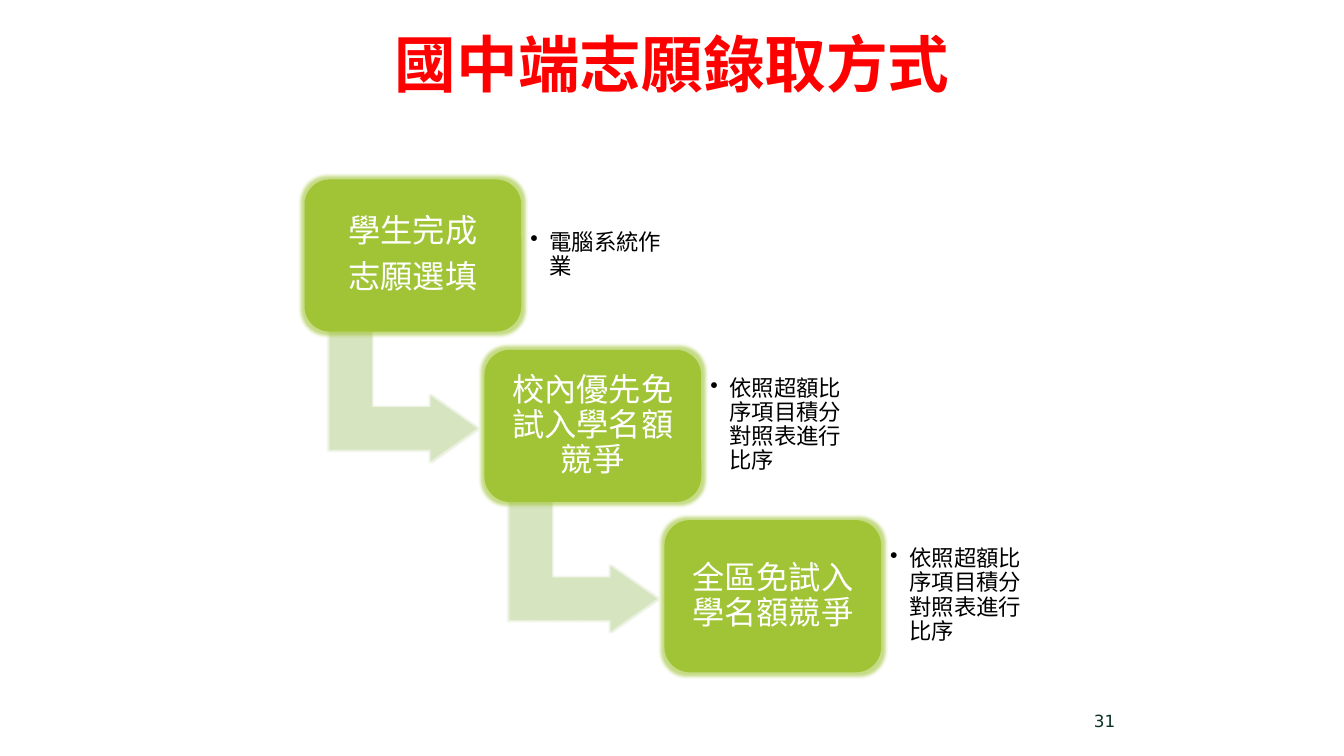
from lxml import etree
from pptx import Presentation
from pptx.dml.color import RGBColor
from pptx.enum import shapes, text
from pptx.oxml import ns
from pptx.util import Inches, Pt

# Content
TITLE = "國中端志願錄取方式"
PAGE_NUMBER = "31"
STEPS = [
    (["學生完成", "志願選填"], "電腦系統作業"),
    (["校內優先免試入學名額競爭"], "依照超額比序項目積分對照表進行比序"),
    (["全區免試入學名額競爭"], "依照超額比序項目積分對照表進行比序"),
]

# Look
COLORS = {"title": "FF0000", "step": "A0C435", "arrow": "D6E4BF", "halo": "E4EDD6",
          "label": "FFFFFF", "note": "000000", "number": "0C3226"}
CJK = "Noto Sans CJK SC"
ALIGN = text.PP_ALIGN
STYLES = {
    "title": {"size": Pt(44), "name": CJK, "bold": True},
    "label": {"size": Pt(23), "name": CJK},
    "note": {"size": Pt(16), "name": CJK},
    "number": {"size": Pt(12), "name": "DejaVu Sans"},
}
PARAGRAPHS = {
    "title": {"alignment": ALIGN.CENTER},
    "label": {"alignment": ALIGN.CENTER, "line_spacing": 0.9, "space_after": Pt(8)},
    "note": {"alignment": ALIGN.LEFT, "line_spacing": 0.9, "space_after": Pt(2.4)},
    "number": {"alignment": ALIGN.RIGHT},
}

# Staircase: first box, its size, and the shift to the next step
LEFT, TOP = 3.02, 1.78
WIDTH, HEIGHT = 2.15, 1.51
SHIFT_X, SHIFT_Y = 1.785, 1.69
ARROW_WIDTH, ARROW_HEIGHT = 1.28, 1.46


def rgb(name):
    return RGBColor.from_string(COLORS[name])


def child(parent, tag, **attributes):
    return etree.SubElement(parent, ns.qn(tag), attributes)


def write(shape, lines, style, inset=None, bullet=False):
    frame = shape.text_frame
    frame.word_wrap = True
    frame.auto_size = text.MSO_AUTO_SIZE.NONE
    frame.vertical_anchor = text.MSO_ANCHOR.MIDDLE
    if inset is not None:
        for side in ("left", "top", "right", "bottom"):
            setattr(frame, f"margin_{side}", Inches(inset))
    for index, line in enumerate(lines):
        para = frame.add_paragraph() if index else frame.paragraphs[0]
        if bullet:
            properties = para._p.get_or_add_pPr()
            properties.set("marL", str(Inches(0.19)))
            properties.set("indent", str(-Inches(0.19)))
            child(properties, "a:buChar", char="•")
        for key, value in PARAGRAPHS[style].items():
            setattr(para, key, value)
        span = para.add_run()
        span.text = line
        for key, value in STYLES[style].items():
            setattr(span.font, key, value)
        span.font.color.rgb = rgb(style)
        child(span._r.get_or_add_rPr(), "a:ea", typeface=STYLES[style]["name"])


def add_glowing(page, kind, place, color, glow, radius, opacity):
    shape = page.shapes.add_shape(kind, *map(Inches, place))
    shape.shadow.inherit = False
    shape.fill.solid()
    shape.fill.fore_color.rgb = rgb(color)
    shape.line.fill.background()
    effects = shape._element.spPr.find(ns.qn("a:effectLst"))
    halo = child(effects, "a:glow", rad=str(Pt(radius)))
    tint = child(halo, "a:srgbClr", val=COLORS[glow])
    child(tint, "a:alpha", val=str(opacity * 1000))
    return shape


def add_text(page, place, lines, style, **options):
    write(page.shapes.add_textbox(*map(Inches, place)), lines, style, **options)


def add_step(page, index, label, note):
    left, top = LEFT + index * SHIFT_X, TOP + index * SHIFT_Y
    # Arrow down and right to the next step
    if index < len(STEPS) - 1:
        place = (left + 0.34, top + 1.42, ARROW_WIDTH, ARROW_HEIGHT)
        arrow = add_glowing(page, shapes.MSO_SHAPE.BENT_UP_ARROW, place,
                            "arrow", "halo", 2, 80)
        arrow.rotation = 90
        for number, value in enumerate((0.328, 0.25, 0.358)):
            arrow.adjustments[number] = value
    # Step box and its note
    box = add_glowing(page, shapes.MSO_SHAPE.ROUNDED_RECTANGLE,
                      (left, top, WIDTH, HEIGHT), "step", "step", 5, 60)
    box.adjustments[0] = 0.167
    write(box, label, "label", inset=0.1)
    add_text(page, (left + WIDTH + 0.01, top + 0.14, 1.57, 1.22), [note], "note",
             inset=0.08, bullet=True)


def main():
    deck = Presentation()
    deck.slide_width, deck.slide_height = Inches(13.33), Inches(7.5)
    page = deck.slides.add_slide(deck.slide_layouts[5])

    # Title
    title = page.shapes.title
    title.left, title.top, title.width, title.height = map(Inches, (0.67, 0, 12, 1.25))
    write(title, [TITLE], "title")

    # Steps
    for index, (label, note) in enumerate(STEPS):
        add_step(page, index, label, note)

    # Page number
    add_text(page, (8.83, 6.95, 2.33, 0.4), [PAGE_NUMBER], "number")
    deck.save("out.pptx")


if __name__ == "__main__":
    main()
